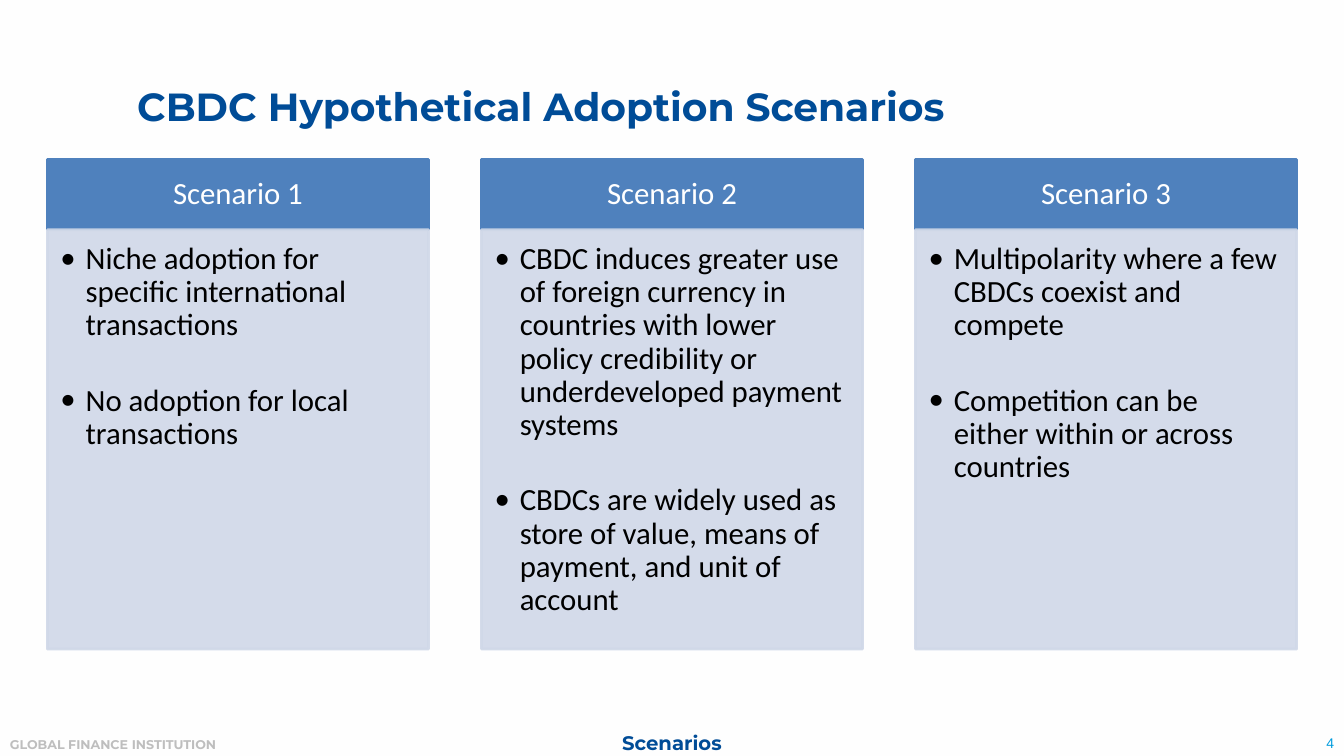
import dataclasses

import pptx
import pptx.dml.color
import pptx.enum.shapes
import pptx.enum.text
import pptx.oxml
import pptx.oxml.ns
import pptx.util

Inches = pptx.util.Inches
Pt = pptx.util.Pt
ALIGN = pptx.enum.text.PP_ALIGN
ANCHOR = pptx.enum.text.MSO_ANCHOR


@dataclasses.dataclass(frozen=True)
class Theme:
    """Colours, fonts and type sizes of the slide."""
    background: str = "FEFEFE"
    navy: str = "004C97"
    cyan: str = "009CDE"
    grey: str = "BEBEBE"
    header: str = "4F81BD"
    panel: str = "D0D8E8"
    white: str = "FFFFFF"
    black: str = "000000"
    display: str = "Montserrat"
    text: str = "Calibri"
    number: str = "Arial"
    title_size: int = 28
    card_size: int = 22
    section_size: int = 14
    number_size: int = 10
    footer_size: int = 9


THEME = Theme()
SLIDE_W, SLIDE_H = 13.33, 7.5
SCENARIOS = [
    ("Scenario 1", [
        "Niche adoption for specific international transactions",
        "No adoption for local transactions"]),
    ("Scenario 2", [
        "CBDC induces greater use of foreign currency in countries with lower "
        "policy credibility or underdeveloped payment systems",
        "CBDCs are widely used as store of value, means of payment, and unit of account"]),
    ("Scenario 3", [
        "Multipolarity where a few CBDCs coexist and compete",
        "Competition can be either within or across countries"]),
]


def rgb(value):
    """Return a colour object for a hex string."""
    return pptx.dml.color.RGBColor.from_string(value)


def place(sp, box):
    """Move a shape to a box given in inches."""
    sp.left, sp.top, sp.width, sp.height = (Inches(v) for v in box)


def set_bullet(p, char, indent):
    """Give a paragraph a bullet, or none, with a hanging indent."""
    pPr = p._p.get_or_add_pPr()
    pPr.set("marL", str(Inches(indent)))
    pPr.set("indent", str(-Inches(indent)))
    ns = pptx.oxml.ns.nsdecls("a")
    if char:
        pPr.append(pptx.oxml.parse_xml(f'<a:buFont {ns} typeface="{THEME.text}"/>'))
        pPr.append(pptx.oxml.parse_xml(f'<a:buChar {ns} char="{char}"/>'))
    else:
        pPr.append(pptx.oxml.parse_xml(f"<a:buNone {ns}/>"))


def write(sp, *lines, size, color, font=THEME.text, bold=False, align=ALIGN.LEFT,
          anchor=ANCHOR.TOP, insets=(0.1, 0.05, 0.1, 0.05), spacing=1.0, gap=0,
          bullet=None, indent=0):
    """Fill a shape with formatted paragraphs."""
    tf = sp.text_frame
    tf.word_wrap = True
    tf.auto_size = pptx.enum.text.MSO_AUTO_SIZE.NONE
    tf.vertical_anchor = anchor
    tf.margin_left, tf.margin_top, tf.margin_right, tf.margin_bottom = (
        Inches(v) for v in insets)
    for i, line in enumerate(lines):
        p = tf.add_paragraph() if i else tf.paragraphs[0]
        p.alignment = align
        p.line_spacing = spacing
        p.space_before = Pt(0)
        p.space_after = Pt(gap if i < len(lines) - 1 else 0)
        set_bullet(p, bullet, indent)
        r = p.add_run()
        r.text = line
        r.font.name = font
        r.font.size = Pt(size)
        r.font.bold = bold
        r.font.color.rgb = rgb(color)


def add_panel(slide, box, color, opacity=100):
    """Add a rectangle with matching fill and outline."""
    sp = slide.shapes.add_shape(
        pptx.enum.shapes.MSO_SHAPE.RECTANGLE, *(Inches(v) for v in box))
    sp.shadow.inherit = False
    sp.fill.solid()
    sp.fill.fore_color.rgb = rgb(color)
    sp.line.color.rgb = rgb(color)
    sp.line.width = Pt(2)
    if opacity < 100:
        for clr in sp._element.spPr.iter(pptx.oxml.ns.qn("a:srgbClr")):
            clr.append(pptx.oxml.parse_xml(
                f'<a:alpha {pptx.oxml.ns.nsdecls("a")} val="{opacity * 1000}"/>'))
    return sp


def add_card(slide, box, heading, points):
    """Add one scenario: a header bar above a panel of bullets."""
    left, top, width, height = box
    header_h = 0.7
    header = add_panel(slide, (left, top, width, header_h), THEME.header)
    write(header, heading, size=THEME.card_size, color=THEME.white, align=ALIGN.CENTER,
          anchor=ANCHOR.MIDDLE, insets=(0.17, 0.1, 0.17, 0.1), spacing=0.9)
    panel = add_panel(slide, (left, top + header_h, width, height - header_h),
                      THEME.panel, opacity=90)
    write(panel, *points, size=THEME.card_size, color=THEME.black,
          insets=(0.13, 0.13, 0.17, 0.19), spacing=0.9, gap=30,
          bullet="•", indent=0.25)


def add_cards(slide, box, scenarios):
    """Spread the scenario cards evenly across a box."""
    left, top, width, height = box
    card_w = 3.78
    pitch = (width - card_w) / (len(scenarios) - 1)
    for i, (heading, points) in enumerate(scenarios):
        add_card(slide, (left + i * pitch, top, card_w, height), heading, points)


def add_heading(slide, box, text):
    """Place the slide title."""
    sp = slide.shapes.title
    place(sp, box)
    write(sp, text, size=THEME.title_size, color=THEME.navy, font=THEME.display,
          bold=True, anchor=ANCHOR.MIDDLE, insets=(0, 0, 0, 0), spacing=0.9)


def add_footer(slide, box, owner, section, number):
    """Place the owner, section name and slide number along the bottom."""
    left, top, width, height = box
    sp = slide.shapes.add_textbox(0, 0, 0, 0)
    place(sp, (left, top + 0.11, 10, 0.25))
    write(sp, owner, size=THEME.footer_size, color=THEME.grey, font=THEME.display, bold=True)
    sp = slide.shapes.add_textbox(0, 0, 0, 0)
    place(sp, (left + width - 1.32, top + height - 0.27, 1.32, 0.27))
    write(sp, number, size=THEME.number_size, color=THEME.cyan, font=THEME.number,
          align=ALIGN.RIGHT, anchor=ANCHOR.BOTTOM)
    sp = slide.placeholders[1]
    place(sp, (left + (width - 7.52) / 2, top, 7.52, 0.28))
    write(sp, section, size=THEME.section_size, color=THEME.navy, font=THEME.display,
          bold=True, align=ALIGN.CENTER, anchor=ANCHOR.MIDDLE, insets=(0, 0.15, 0, 0))


def main():
    """Build and save the slide."""
    prs = pptx.Presentation()
    prs.slide_width, prs.slide_height = Inches(SLIDE_W), Inches(SLIDE_H)
    slide = prs.slides.add_slide(prs.slide_layouts[1])
    slide.background.fill.solid()
    slide.background.fill.fore_color.rgb = rgb(THEME.background)
    add_heading(slide, (1.36, 0.54, 10.62, 1.07), "CBDC Hypothetical Adoption Scenarios")
    add_cards(slide, (0.47, 1.58, SLIDE_W - 2 * 0.47, 4.86), SCENARIOS)
    add_footer(slide, (0, 7.15, SLIDE_W, SLIDE_H - 7.15),
               "GLOBAL FINANCE INSTITUTION", "Scenarios", "4")
    prs.save("out.pptx")


if __name__ == "__main__":
    main()
